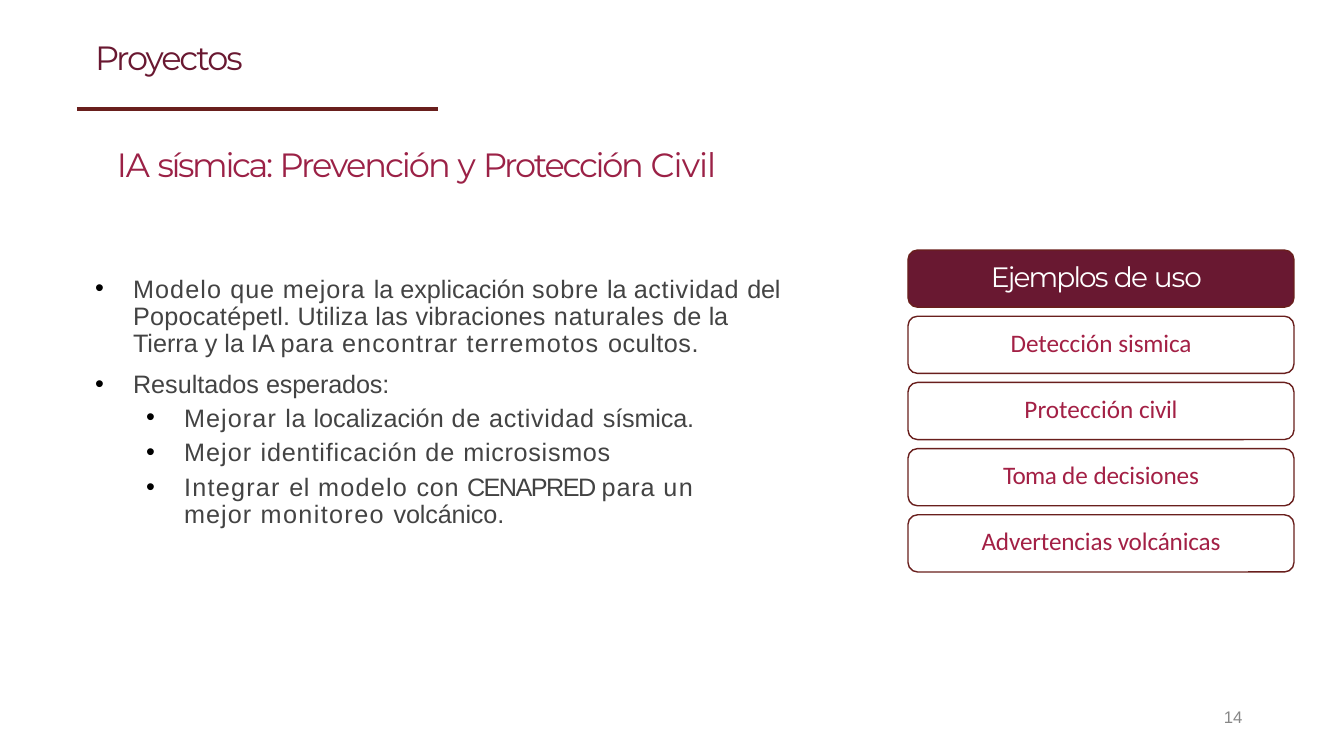
from dataclasses import dataclass

from lxml import etree
from pptx import Presentation
from pptx.dml.color import RGBColor
from pptx.enum.shapes import MSO_CONNECTOR, MSO_SHAPE
from pptx.enum.text import MSO_ANCHOR, MSO_AUTO_SIZE, PP_ALIGN
from pptx.oxml.ns import qn
from pptx.util import Pt

STRAIGHT = MSO_CONNECTOR.STRAIGHT
ROUNDED = MSO_SHAPE.ROUNDED_RECTANGLE
TOP, MIDDLE = MSO_ANCHOR.TOP, MSO_ANCHOR.MIDDLE
LEFT, CENTER = PP_ALIGN.LEFT, PP_ALIGN.CENTER
NO_AUTOFIT = MSO_AUTO_SIZE.NONE

PAGE_WIDTH, PAGE_HEIGHT = 1344, 756
SCALE = 12192000 / PAGE_WIDTH


@dataclass(frozen=True)
class Style:
    font: str
    size: int
    color: str


@dataclass(frozen=True)
class Theme:
    rule: str = "691F1D"
    header_fill: str = "691831"
    card_fill: str = "FFFFFF"
    bullet: str = "000000"
    title: Style = Style("Montserrat", 24, "691831")
    subtitle: Style = Style("Montserrat", 24, "9B2146")
    body: Style = Style("Arial", 18, "434343")
    header: Style = Style("Montserrat", 20, "FFFFFF")
    card: Style = Style("Calibri", 18, "A32045")
    number: Style = Style("Arial", 12, "878787")


THEME = Theme()

# Each span is a text with its letter spacing in points
TITLE = [("Proyectos", -1.5)]
SUBTITLE = [("IA ", -0.9), ("sísmica: ", -1.7), ("Prevención ", -1.4), ("y ", -1.1),
            ("Protección ", -1.6), ("Civil", -0.7)]
PAGE_NUMBER = [("14", -0.2)]

# Level, space before, line spacing, spans
BULLETS = [
    (0, 0, 19.5, [
        ("Modelo ", 0.8), ("que ", 0.6), ("mejora ", 0.7), ("la explicación ", 0),
        ("sobre ", 0.6), ("la ", 0), ("actividad ", 0.5), ("del ", -0.2),
        ("Popocatépetl. Utiliza las vibraciones ", 0.2), ("naturales ", 0.6),
        ("de ", 0.2), ("la ", -0.2), ("Tierra y la IA ", 0), ("para ", 0.6),
        ("encontrar ", 0.8), ("terremotos ", 0.9), ("ocultos.", 0.4)]),
    (0, 7.5, None, [("Resultados ", 0), ("esperados:", -0.1)]),
    (1, 2.4, None, [("Mejorar ", 0.8), ("la", 0.6), (" localización", 0), (" de ", 0.6),
                    ("actividad ", 0.5), ("sísmica.", -0.1)]),
    (1, 3.2, None, [("Mejor ", 0.8), ("identificación de ", 0.6), ("microsismos", 0.5)]),
    (1, 6.1, 18.8, [("Integrar ", 0.9), ("el ", 0.5), ("modelo ", 0.9), ("con ", 0.5),
                    ("CENAPRED ", -1.1), ("para ", 0.6), ("un", 1.1), ("\n", 0),
                    ("mejor ", 0.8), ("monitoreo ", 1), ("volcánico.", -0.1)]),
]

HEADER = [("Ejemplos ", -1.4), ("de ", -1.2), ("uso", -0.7)]
USES = [
    [("Detección ", 0), ("sismica", -0.1)],
    [("Protección ", 0), ("civil", -0.2)],
    [("Toma ", -0.4), ("de ", 0), ("decisiones", -0.1)],
    [("Advertencias volcánicas", -0.1)],
]


def px(length):
    return round(length * SCALE)


def color(value):
    return RGBColor.from_string(value)


def place(shape, box):
    shape.left, shape.top, shape.width, shape.height = map(px, box)


def prepare_frame(shape, insets=(0, 1, 0, 0), anchor=TOP):
    frame = shape.text_frame
    frame.word_wrap = True
    frame.auto_size = NO_AUTOFIT
    frame.vertical_anchor = anchor
    (frame.margin_left, frame.margin_top,
     frame.margin_right, frame.margin_bottom) = map(px, insets)
    return frame


def write(para, spans, style, align=LEFT):
    para.alignment = align
    para.font.name = style.font
    para.font.size = Pt(style.size)
    para.font.bold = False
    para.font.color.rgb = color(style.color)
    for text, tracking in spans:
        if text == "\n":
            para.add_line_break()
            continue
        run = para.add_run()
        run.text = text
        if tracking:
            run._r.get_or_add_rPr().set("spc", str(round(tracking * 100)))


def add_bullet(para, indent, hanging):
    properties = para._p.get_or_add_pPr()
    properties.set("marL", str(px(indent)))
    properties.set("indent", str(px(-hanging)))
    bullet_color = etree.SubElement(properties, qn("a:buClr"))
    etree.SubElement(bullet_color, qn("a:srgbClr"), val=THEME.bullet)
    etree.SubElement(properties, qn("a:buFont"), typeface="Arial")
    etree.SubElement(properties, qn("a:buChar"), char="•")
    tabs = etree.SubElement(properties, qn("a:tabLst"))
    etree.SubElement(tabs, qn("a:tab"), pos=str(px(indent)), algn="l")


def add_label(page, box, spans, style):
    label = page.shapes.add_textbox(*map(px, box))
    write(prepare_frame(label).paragraphs[0], spans, style)


# Title with its rule, and the subtitle
def build_heading(page, box):
    left, top, width, height = box
    title = page.shapes.title
    place(title, (left + 18, top, width, height))
    write(prepare_frame(title).paragraphs[0], TITLE, THEME.title)

    rule_y = top + 73
    rule = page.shapes.add_connector(
        STRAIGHT, px(left), px(rule_y), px(left + 361), px(rule_y))
    rule.line.color.rgb = color(THEME.rule)
    rule.line.width = Pt(3)
    etree.SubElement(rule._element.spPr, qn("a:effectLst"))

    add_label(page, (left + 40, top + 107, 675, height), SUBTITLE, THEME.subtitle)


# Bulleted description
def build_body(page, box):
    body = page.placeholders[1]
    place(body, box)
    frame = prepare_frame(body, insets=(0, 5, 0, 0))
    for index, (level, before, spacing, spans) in enumerate(BULLETS):
        para = frame.add_paragraph() if index else frame.paragraphs[0]
        para.level = level
        add_bullet(para, indent=39 + 51 * level, hanging=38)
        para.space_before = Pt(before)
        para.line_spacing = Pt(spacing) if spacing else 1.0
        write(para, spans, THEME.body)


def add_card(page, box, spans, style, fill, right_inset=0):
    card = page.shapes.add_shape(ROUNDED, *map(px, box))
    card.shadow.inherit = False
    card.fill.solid()
    card.fill.fore_color.rgb = color(fill)
    card.line.color.rgb = color(THEME.rule)
    card.line.width = Pt(1)
    frame = prepare_frame(card, (0, 0, right_inset, 5), MIDDLE)
    write(frame.paragraphs[0], spans, style, CENTER)


# Header card above one card per use
def build_uses(page, box):
    left, top, width, height = box
    gap = 9
    card_height = (height - gap * len(USES)) / (len(USES) + 1)
    add_card(page, (left, top, width, card_height), HEADER, THEME.header,
             THEME.header_fill, right_inset=9)
    for row, spans in enumerate(USES, start=1):
        card_top = top + row * (card_height + gap)
        add_card(page, (left, card_top, width, card_height), spans, THEME.card,
                 THEME.card_fill)


def main():
    deck = Presentation()
    deck.slide_width, deck.slide_height = px(PAGE_WIDTH), px(PAGE_HEIGHT)
    page = deck.slides.add_slide(deck.slide_layouts[1])
    build_heading(page, (77, 36, 457, 43))
    build_body(page, (94, 271, 695, 258))
    build_uses(page, (908, 250, 386, 322))
    add_label(page, (1224, 706, 28, 25), PAGE_NUMBER, THEME.number)
    deck.save("out.pptx")


if __name__ == "__main__":
    main()
